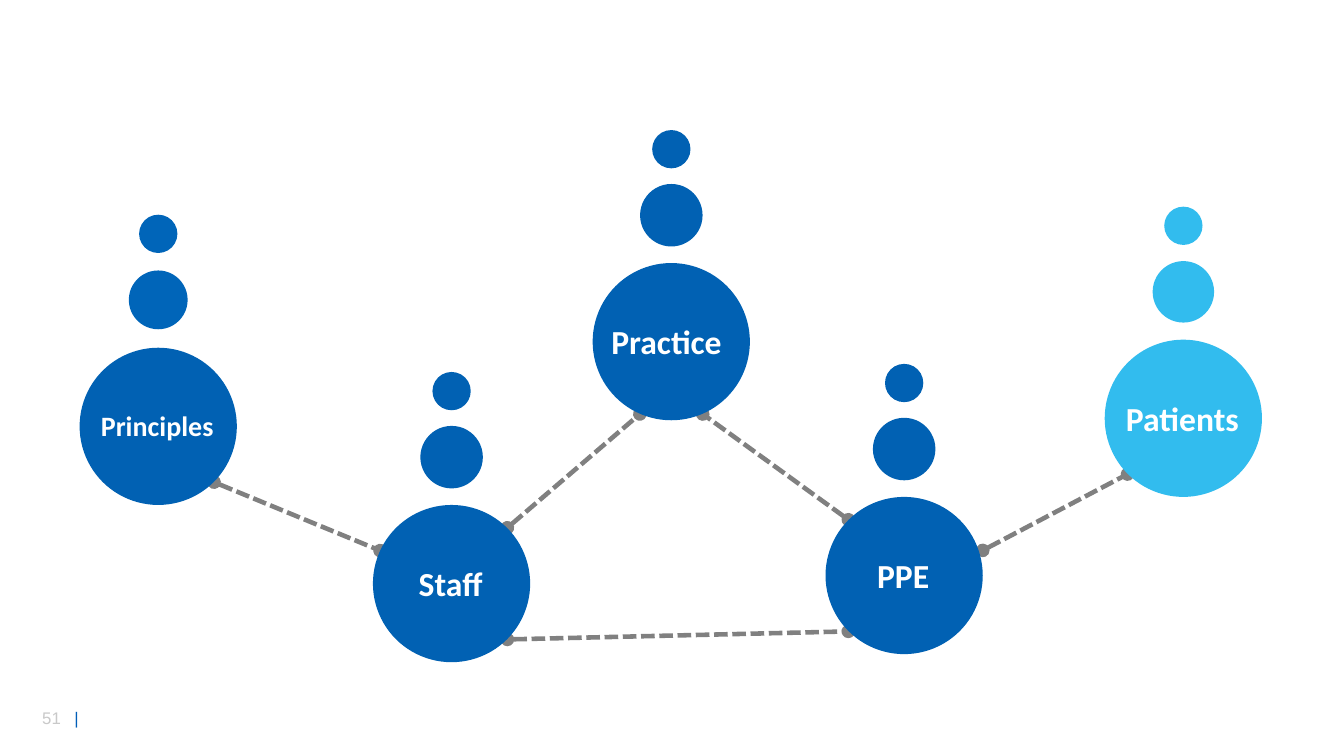
from collections import namedtuple

from lxml import etree
from pptx import Presentation, util as u
from pptx.dml.color import RGBColor
from pptx.enum import dml, shapes, text
from pptx.oxml import ns

COLS, ROWS = 160, 90
CELL = u.Inches(1) / 12
BIG, SMALL = 18.72, 4.56
LABEL = 17.04
MID_UP, TOP_UP = 15.06, 22.92
DIAG = 0.71

BLUE = RGBColor(0x01, 0x61, 0xB3)
BRIGHT = RGBColor(0x00, 0x65, 0xB9)
SKY = RGBColor(0x32, 0xBC, 0xEE)
MARK = RGBColor(0x00, 0x5E, 0xB8)
GREY = RGBColor(0x80, 0x80, 0x80)
PALE = RGBColor(0xC9, 0xC9, 0xC9)
WHITE = RGBColor(0xFF, 0xFF, 0xFF)

Topic = namedtuple("Topic", "label x y fill dots mid size high")

TOPICS = {
    "rules": Topic("Principles", 18.84, 50.76, BLUE, BRIGHT, 7, 20, 5.28),
    "staff": Topic("Staff", 53.76, 69.48, BLUE, BLUE, 7.44, 24, 6),
    "work": Topic("Practice ", 79.92, 40.68, BLUE, BLUE, 7.44, 24, 6),
    "gear": Topic("PPE", 107.64, 68.52, BLUE, BLUE, 7.44, 24, 6),
    "care": Topic("Patients", 140.88, 49.8, SKY, SKY, 7.32, 24, 6),
}

LINKS = [
    ("rules", (DIAG, DIAG), "staff", (-0.91, -0.42)),
    ("staff", (DIAG, DIAG), "gear", (-DIAG, DIAG)),
    ("gear", (1, -0.32), "care", (-DIAG, DIAG)),
    ("staff", (DIAG, -DIAG), "work", (-0.4, 0.92)),
    ("gear", (-DIAG, -DIAG), "work", (0.4, 0.92)),
]


def cells(*spans):
    return [u.Emu(round(span * CELL)) for span in spans]


def add_run(para, words, font, size, color, bold=False):
    run = para.add_run()
    run.text = words
    run.font.name = font
    run.font.size = u.Pt(size)
    run.font.bold = bold
    run.font.color.rgb = color


def add_box(parent, x, y, wide, high):
    box = parent.add_textbox(*cells(x, y, wide, high))
    box.text_frame.word_wrap = True
    box.text_frame.auto_size = text.MSO_AUTO_SIZE.SHAPE_TO_FIT_TEXT
    return box.text_frame.paragraphs[0]


def add_disc(parent, x, y, size, color):
    spot = cells(x - size / 2, y - size / 2, size, size)
    disc = parent.add_shape(shapes.MSO_SHAPE.OVAL, *spot)
    disc.shadow.inherit = False
    disc.fill.solid()
    disc.fill.fore_color.rgb = color
    disc.line.fill.background()


def add_topic(slide, topic):
    group = slide.shapes.add_group_shape().shapes
    add_disc(group, topic.x, topic.y, BIG, topic.fill)
    add_disc(group, topic.x, topic.y - MID_UP, topic.mid, topic.dots)
    add_disc(group, topic.x, topic.y - TOP_UP, SMALL, topic.dots)
    para = add_box(group, topic.x - LABEL / 2 - 0.12,
                   topic.y - topic.high / 2 - 0.06, LABEL, topic.high)
    para.alignment = text.PP_ALIGN.CENTER
    add_run(para, topic.label, "Calibri", topic.size, WHITE, True)


def rim(topic, shift):
    return [topic.x + shift[0] * BIG / 2, topic.y + shift[1] * BIG / 2]


def add_link(slide, start, leave, end, reach):
    ends = rim(TOPICS[start], leave) + rim(TOPICS[end], reach)
    link = slide.shapes.add_connector(
        shapes.MSO_CONNECTOR.STRAIGHT, *cells(*ends))
    link.line.color.rgb = GREY
    link.line.width = u.Pt(3.25)
    link.line.dash_style = dml.MSO_LINE.SQUARE_DOT
    stroke = link.line._get_or_add_ln()
    for tip in ("a:headEnd", "a:tailEnd"):
        etree.SubElement(stroke, ns.qn(tip), type="oval")
    etree.SubElement(link._element.spPr, ns.qn("a:effectLst"))


def add_page(slide):
    para = add_box(slide.shapes, 3.84, 83.64, 8.52, 3.6)
    tabs = etree.SubElement(para._p.get_or_add_pPr(), ns.qn("a:tabLst"))
    etree.SubElement(tabs, ns.qn("a:tab"),
                     pos=str(u.Inches(0.32)), algn="l")
    add_run(para, "51\t", "Arial", 12, PALE)
    add_run(para, "|", "Arial", 12, MARK)


def main():
    deck = Presentation()
    deck.slide_width, deck.slide_height = cells(COLS, ROWS)
    slide = deck.slides.add_slide(deck.slide_layouts[6])
    add_page(slide)
    for link in LINKS:
        add_link(slide, *link)
    for topic in TOPICS.values():
        add_topic(slide, topic)
    deck.save("out.pptx")


if __name__ == "__main__":
    main()
